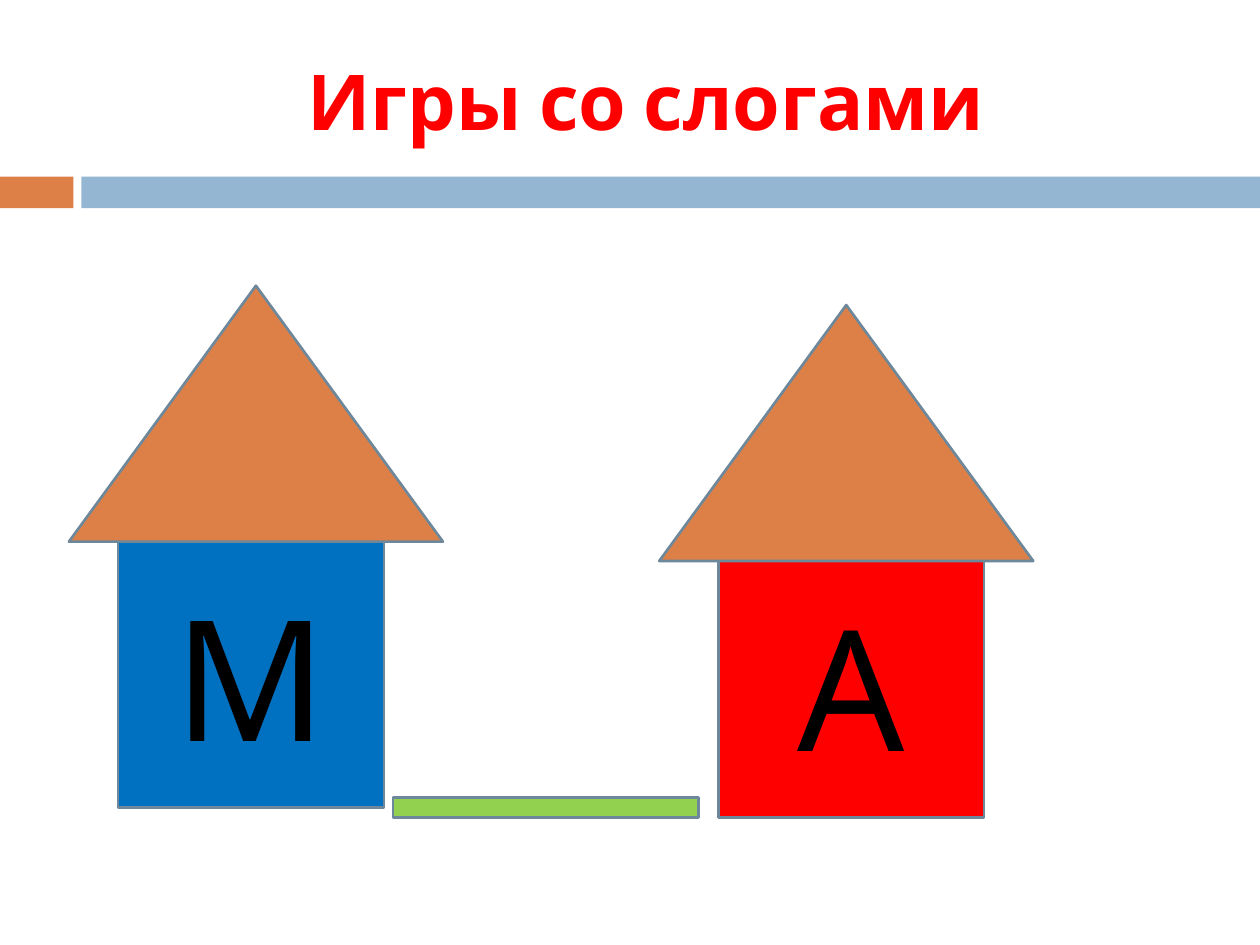
from dataclasses import dataclass
from typing import Optional

from pptx import Presentation
from pptx.dml.color import RGBColor
from pptx.enum.shapes import MSO_SHAPE
from pptx.enum.text import MSO_ANCHOR, PP_ALIGN
from pptx.util import Cm, Pt

FONT = "Cabin"
ORANGE = RGBColor(0xDD, 0x80, 0x47)
PALE_BLUE = RGBColor(0x94, 0xB6, 0xD2)
OUTLINE = RGBColor(0x6D, 0x87, 0x9B)
BLUE = RGBColor(0x00, 0x70, 0xC0)
RED = RGBColor(0xFF, 0x00, 0x00)
GREEN = RGBColor(0x92, 0xD0, 0x50)
BLACK = RGBColor(0x00, 0x00, 0x00)

WALL_SIZE = 5.36
ROOF_WIDTH, ROOF_HEIGHT = 7.54, 5.16


@dataclass(frozen=True)
class Box:
    """A rectangle on the page, in centimetres."""
    left: float
    top: float
    width: float
    height: float

    def lengths(self) -> tuple:
        return Cm(self.left), Cm(self.top), Cm(self.width), Cm(self.height)


@dataclass(frozen=True)
class House:
    letter: str
    color: RGBColor
    wall_left: float
    wall_top: float
    roof_left: float
    roof_top: float


HOUSES = [
    House("М", BLUE, 2.38, 10.92, 1.39, 5.76),
    House("А", RED, 14.48, 11.12, 13.29, 6.15),
]


def add_block(page, box: Box, fill: RGBColor, line: Optional[RGBColor] = OUTLINE,
              kind=MSO_SHAPE.RECTANGLE):
    shape = page.shapes.add_shape(kind, *box.lengths())
    shape.shadow.inherit = False
    shape.fill.solid()
    shape.fill.fore_color.rgb = fill
    if line is None:
        shape.line.fill.background()
    else:
        shape.line.color.rgb = line
        shape.line.width = Pt(1.5)
    return shape


def write_text(shape, text: str, *, size: float, color: RGBColor, bold: bool = False) -> None:
    frame = shape.text_frame
    frame.word_wrap = True
    frame.vertical_anchor = MSO_ANCHOR.MIDDLE
    para = frame.paragraphs[0]
    para.alignment = PP_ALIGN.CENTER
    span = para.add_run()
    span.text = text
    span.font.name = FONT
    span.font.size = Pt(size)
    span.font.bold = bold
    span.font.color.rgb = color


def add_house(page, house: House) -> None:
    wall = add_block(page, Box(house.wall_left, house.wall_top, WALL_SIZE, WALL_SIZE), house.color)
    write_text(wall, house.letter, size=96, color=BLACK)
    roof = Box(house.roof_left, house.roof_top, ROOF_WIDTH, ROOF_HEIGHT)
    add_block(page, roof, ORANGE, kind=MSO_SHAPE.ISOSCELES_TRIANGLE)


def main() -> None:
    deck = Presentation()
    deck.slide_width, deck.slide_height = Cm(25.4), Cm(19.05)
    page = deck.slides.add_slide(deck.slide_layouts[6])

    add_block(page, Box(0, 3.56, 1.48, 0.64), ORANGE, line=None)
    add_block(page, Box(1.64, 3.56, 23.76, 0.64), PALE_BLUE, line=None)
    title = page.shapes.add_textbox(*Box(1.7, 0.64, 22.66, 2.74).lengths())
    write_text(title, "Игры со слогами", size=44, color=RED, bold=True)

    for house in HOUSES:
        add_house(page, house)
    add_block(page, Box(7.92, 16.08, 6.16, 0.4), GREEN)

    deck.save("out.pptx")


if __name__ == "__main__":
    main()
